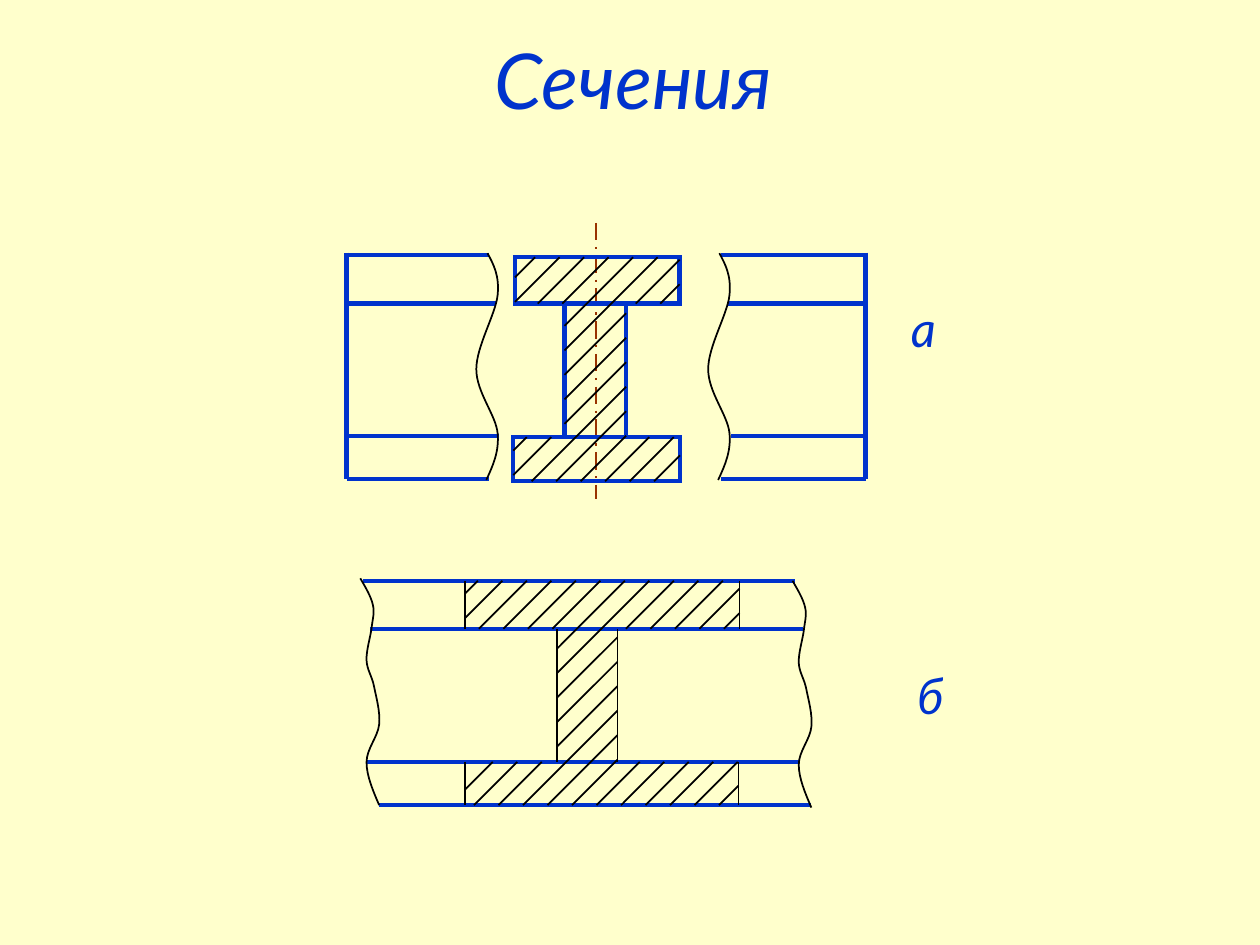
"""Build the slide on sections of an I-beam, hatching each section by rule."""
import pptx
import pptx.dml.color
import pptx.enum.dml
import pptx.enum.shapes
import pptx.enum.text
import pptx.oxml.ns
import pptx.util
import lxml.etree

Pt = pptx.util.Pt
qn = pptx.oxml.ns.qn
BLUE, BLACK, BROWN = "0033CC", "000000", "993300"
THICK, THIN = 2.5, 1
HATCH_PITCH, HATCH_MIN = 14, 4


def paint(fmt, color):
    fill = fmt.fill if hasattr(fmt, "fill") else fmt
    fill.solid()
    fill.fore_color.rgb = pptx.dml.color.RGBColor.from_string(color)


def draw_line(x1, y1, x2, y2, color, width):
    sp = s.shapes.add_connector(pptx.enum.shapes.MSO_CONNECTOR.STRAIGHT,
                                Pt(x1), Pt(y1), Pt(x2), Pt(y2))
    paint(sp.line, color)
    sp.line.width = Pt(width)
    lxml.etree.SubElement(sp._element.spPr, qn("a:effectLst"))
    return sp


prs = pptx.Presentation()
prs.slide_width, prs.slide_height = Pt(720), Pt(540)
s = prs.slides.add_slide(prs.slide_layouts[5])
paint(s.background, "FFFFCC")

removed_section = {
    "beam_ends": (198, 494.6),
    "levels": (145.6, 173.4, 249.1, 273.6),
    "level_breaks": (279.4, 283.7, 285.1, 279.4),
    "break_knots": [(278.6, 144.7), (284.4, 168.5), (272.2, 211),
                    (284.4, 247.7), (277.9, 274.3)],
    "break_shift": (132.5, 0),
    "profile": {"top flange": (294.3, 147, 388.4, 173.5),
                "web": (322.6, 173.5, 357.8, 249.8),
                "bottom flange": (293.3, 249.8, 388.6, 275)},
    "profile_edge": (BLUE, THICK),
    "first_hatch": 452.8,
}
superimposed_section = {
    "beam_ends": None,
    "levels": (331.9, 359.3, 435.4, 460.1),
    "level_breaks": (207.4, 211.7, 209.5, 216.7),
    "break_knots": [(205.9, 330.5), (213.1, 345.6), (212.4, 358.6), (209.5, 377.3),
                    (213.8, 392.4), (216.7, 414), (209.5, 435.6), (216.7, 460.1)],
    "break_shift": (247, 1.4),
    "profile": {"top flange": (265.7, 331.9, 422.6, 359.3),
                "web": (318.2, 359.3, 352.8, 435.4),
                "bottom flange": (265.7, 435.4, 422, 460.1)},
    "profile_edge": (BLACK, THIN),
    "first_hatch": 605,
}

title = s.shapes.title
for text, size, left, top, width, height in (("Сечения", 44, 38, 0, 648, 90),
                                             ("а", 28, 513.4, 167, 28, 41),
                                             ("б", 28, 517, 376.5, 28, 41)):
    is_title = size == 44
    sp = title if is_title else s.shapes.add_textbox(0, 0, 0, 0)
    box = {"left": left, "top": top, "width": width, "height": height}
    for name, value in box.items():
        setattr(sp, name, Pt(value))
    tf = sp.text_frame
    tf.word_wrap = is_title
    r = tf.paragraphs[0].add_run()
    r.text = text
    for name, value in {"name": "Lato", "size": Pt(size), "italic": True}.items():
        setattr(r.font, name, value)
    paint(r.font, BLUE)
title.text_frame.vertical_anchor = pptx.enum.text.MSO_ANCHOR.MIDDLE
title.text_frame.paragraphs[0].alignment = pptx.enum.text.PP_ALIGN.CENTER

axis = draw_line(340.6, 127.4, 340.6, 285.1, BROWN, 1.25)
axis.line.dash_style = pptx.enum.dml.MSO_LINE.LONG_DASH_DOT

for section in (removed_section, superimposed_section):
    profile = section["profile"].values()
    shift_x, shift_y = section["break_shift"]
    ends = section["beam_ends"]

    for y, x in zip(section["levels"], section["level_breaks"]):
        if ends:
            draw_line(ends[0], y, x, y, BLUE, THICK)
            draw_line(x + shift_x, y, ends[1], y, BLUE, THICK)
        else:
            draw_line(x, y, x + shift_x, y, BLUE, THICK)
    if ends:
        for x in ends:
            draw_line(x, section["levels"][0] - THICK / 2,
                      x, section["levels"][-1], BLUE, THICK)
        for part in ("top flange", "bottom flange"):
            left, top, right, bottom = section["profile"][part]
            for y in (top, bottom):
                draw_line(left - THICK / 2, y, right + THICK / 2, y, BLUE, THICK)

    for left, top, right, bottom in profile:
        for x in (left, right):
            draw_line(x, top, x, bottom, *section["profile_edge"])

    knots = section["break_knots"]
    handles = [((after[0] - before[0]) / 6, (after[1] - before[1]) / 6)
               for before, after in zip(knots, knots[2:])]
    into = [(x - hx, y - hy) for (x, y), (hx, hy) in zip(knots[1:], handles)]
    out = [(x + hx, y + hy) for (x, y), (hx, hy) in zip(knots[1:], handles)]
    first = tuple((a + b) / 2 for a, b in zip(knots[0], into[0]))
    last = tuple((a + b) / 2 for a, b in zip(knots[-1], out[-1]))
    curve = [knots[0]]
    for segment in zip([first] + out, into + [last], knots[1:]):
        curve.extend(segment)

    for dx, dy in ((0, 0), (shift_x, shift_y)):
        points = [(Pt(x + dx), Pt(y + dy)) for x, y in curve]
        fb = s.shapes.build_freeform(*points[0])
        fb.add_line_segments(points[1:], close=False)
        sp = fb.convert_to_shape()
        sp.shadow.inherit = False
        sp.fill.background()
        paint(sp.line, BLACK)
        sp.line.width = Pt(THIN)
        path = next(sp._element.iter(qn("a:path")))
        for i, node in enumerate(path.findall(qn("a:lnTo"))):
            if i % 3 == 0:
                bezier = lxml.etree.SubElement(path, qn("a:cubicBezTo"))
            bezier.append(node[0])
            path.remove(node)

    right_limit = max(right for left, top, right, bottom in profile)
    x_plus_y = section["first_hatch"]
    while x_plus_y < right_limit + section["levels"][-1]:
        spans = []
        for left, top, right, bottom in profile:
            start = max(top, x_plus_y - right)
            end = min(bottom, x_plus_y - left)
            if start >= end:
                continue
            if spans and spans[-1][1] == start:
                spans[-1][1] = end
            else:
                spans.append([start, end])
        for start, end in spans:
            if end - start > HATCH_MIN:
                draw_line(x_plus_y - start, start, x_plus_y - end, end, BLACK, THIN)
        x_plus_y += HATCH_PITCH

prs.save("out.pptx")
